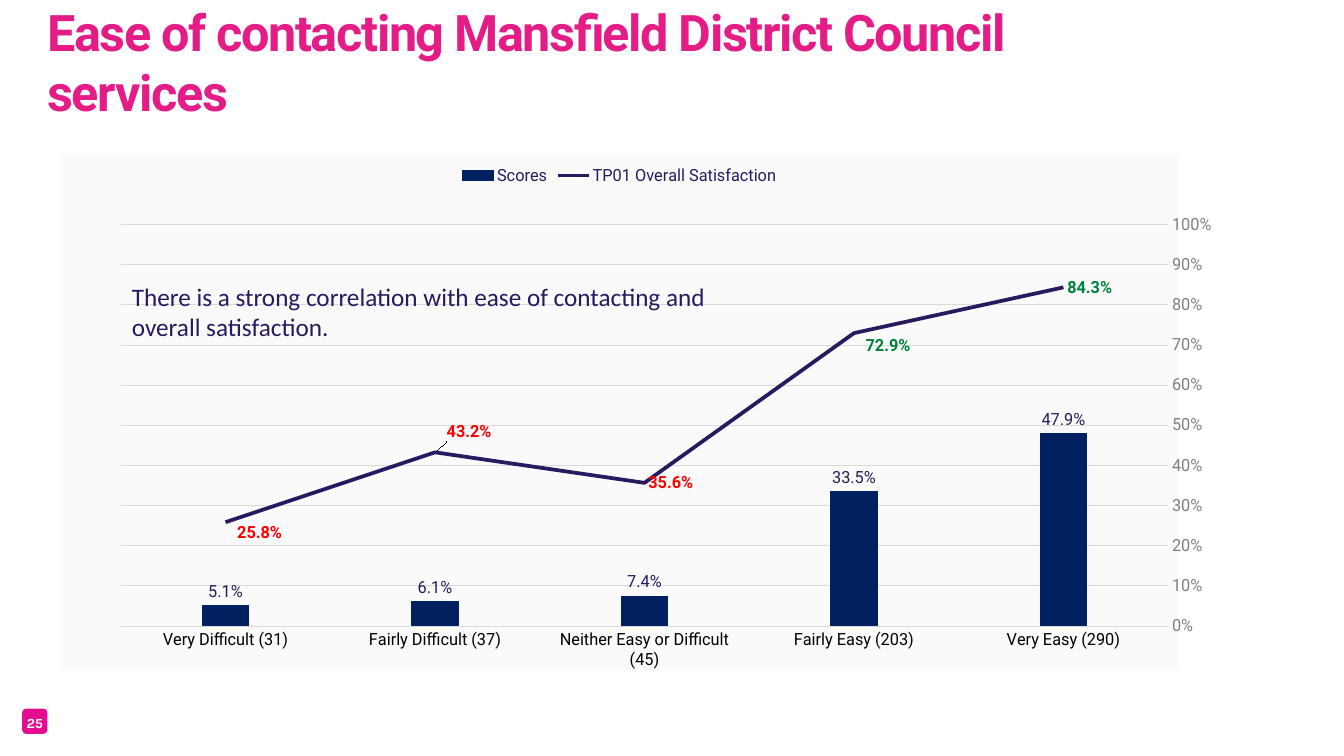
from dataclasses import dataclass

from pptx import Presentation
from pptx.chart.data import CategoryChartData
from pptx.dml.color import RGBColor
from pptx.enum import chart as charts, shapes, text
from pptx.oxml import parse_xml
from pptx.oxml.ns import nsdecls, qn
from pptx.util import Pt


@dataclass(frozen=True)
class Theme:
    pink: str = "E41C86"
    badge: str = "E30D8F"
    white: str = "FFFFFF"
    indigo: str = "291A5F"
    navy: str = "002060"
    black: str = "000000"
    grey: str = "808080"
    grid: str = "D9D9D9"
    panel: str = "FAFAFA"
    low: str = "FF0000"
    high: str = "00823B"
    heading: int = 36
    body: int = 18
    label: int = 12
    small: int = 10
    face: str = "Roboto"


THEME = Theme()
ANSWERS = [  # answer, share, satisfaction, label colour, label shift (x, y)
    ("Very Easy (290)", 0.479, 0.843, THEME.high, None),
    ("Fairly Easy (203)", 0.335, 0.729, THEME.high, (0.007, 0.025)),
    ("Neither Easy or Difficult (45)", 0.074, 0.356, THEME.low, None),
    ("Fairly Difficult (37)", 0.061, 0.432, THEME.low, (0.007, -0.04)),
    ("Very Difficult (31)", 0.051, 0.258, THEME.low, (0.007, 0.02)),
]


def apply(target, values):
    for name, value in values.items():
        setattr(target, name, value)


def style_font(font, size, color, face=THEME.face, bold=False):
    apply(font, {"size": Pt(size), "name": face, "bold": bold})
    font.color.rgb = RGBColor.from_string(color)


def style_line(line, color, width):
    line.color.rgb = RGBColor.from_string(color)
    line.width = Pt(width)


def fill_solid(fill, color):
    fill.solid()
    fill.fore_color.rgb = RGBColor.from_string(color)


def add_text(page, place, words, font, frame_format=None, para_format=None, spacing=None):
    """Add a wrapped text box; spacing is letter spacing in hundredths of a point."""
    frame = page.shapes.add_textbox(*map(Pt, place)).text_frame
    apply(frame, {"word_wrap": True, "auto_size": text.MSO_AUTO_SIZE.SHAPE_TO_FIT_TEXT})
    apply(frame, frame_format or {})
    para = frame.paragraphs[0]
    apply(para, para_format or {})
    span = para.add_run()
    span.text = words
    style_font(span.font, **font)
    if spacing:
        span.font._element.set("spc", str(spacing))


def add_badge(page, number):
    badge = page.shapes.add_shape(
        shapes.MSO_SHAPE.ROUNDED_RECTANGLE, *map(Pt, (15.84, 506.16, 18, 18)))
    badge.shadow.inherit = False
    badge.line.fill.background()
    fill_solid(badge.fill, THEME.badge)
    add_text(page, (15.84, 510.5, 18, 9.4), number,
             {"size": THEME.small, "color": THEME.white, "face": "Karla", "bold": True},
             NO_MARGINS, {"alignment": text.PP_ALIGN.CENTER, "line_spacing": Pt(12)})


def manual_layout(x, y, extra=""):
    return parse_xml(
        f'<c:layout {nsdecls("c")}><c:manualLayout>{extra}'
        f'<c:x val="{x}"/><c:y val="{y}"/></c:manualLayout></c:layout>')


def place_plot(chart, x, y, width, height):
    area = chart._chartSpace.chart.plotArea
    for old in area.findall(qn("c:layout")):
        area.remove(old)
    layout = manual_layout(
        x, y, '<c:layoutTarget val="inner"/><c:xMode val="edge"/><c:yMode val="edge"/>')
    for tag, value in (("w", width), ("h", height)):
        layout[0].append(parse_xml(f'<c:{tag} {nsdecls("c")} val="{value}"/>'))
    area.insert(0, layout)


def turn_last_series_into_line(chart):
    bars = chart._chartSpace.chart.plotArea.find(qn("c:barChart"))
    series = bars.findall(qn("c:ser"))[-1]
    for flag in series.findall(qn("c:invertIfNegative")):
        series.remove(flag)
    axes = "".join(f'<c:axId val="{axis.get("val")}"/>' for axis in bars.findall(qn("c:axId")))
    lines = parse_xml(
        f'<c:lineChart {nsdecls("c")}><c:grouping val="standard"/><c:varyColors val="0"/>'
        f'<c:marker val="1"/>{axes}</c:lineChart>')
    lines.insert(2, series)
    bars.addnext(lines)


def fill_chart(chart, color):
    chart._chartSpace.chart.addnext(parse_xml(
        f'<c:spPr {nsdecls("c", "a")}><a:solidFill><a:srgbClr val="{color}"/></a:solidFill>'
        '<a:ln><a:noFill/></a:ln></c:spPr>'))


def style_axes(chart):
    for axis, color in ((chart.category_axis, THEME.black), (chart.value_axis, THEME.grey)):
        apply(axis, {"major_tick_mark": charts.XL_TICK_MARK.NONE,
                     "minor_tick_mark": charts.XL_TICK_MARK.NONE})
        axis.format.line.fill.background()
        style_font(axis.tick_labels.font, THEME.label, color)
    chart.category_axis.reverse_order = True
    apply(chart.value_axis, {"minimum_scale": 0, "maximum_scale": 1, "major_unit": 0.1,
                             "has_major_gridlines": True})
    apply(chart.value_axis.tick_labels, {"number_format": "0%", "number_format_is_linked": False})
    style_line(chart.value_axis.major_gridlines.format.line, THEME.grid, 0.25)


def style_labels(labels, position):
    apply(labels, {"show_value": True, "number_format": "0.0%",
                   "number_format_is_linked": False, "position": position})
    style_font(labels.font, THEME.label, THEME.indigo)


def style_bars(plot):
    apply(plot, {"gap_width": 350, "overlap": -27, "vary_by_categories": False})
    scores = plot.series[0]
    fill_solid(scores.format.fill, THEME.navy)
    style_line(scores.format.line, THEME.navy, 0.75)
    style_labels(scores.data_labels, charts.XL_LABEL_POSITION.OUTSIDE_END)


def style_satisfaction(series):
    series.smooth = False
    series.marker.style = charts.XL_MARKER_STYLE.NONE
    style_line(series.format.line, THEME.indigo, 2.75)
    style_labels(series.data_labels, charts.XL_LABEL_POSITION.RIGHT)
    for index, (*_, color, shift) in enumerate(ANSWERS):
        label = series.points[index].data_label
        style_font(label.font, THEME.label, color, bold=True)
        label.position = charts.XL_LABEL_POSITION.RIGHT
        position = label._dLbl.find(qn("c:idx"))
        position.addnext(parse_xml(
            f'<c:numFmt {nsdecls("c")} formatCode="0.0%" sourceLinked="0"/>'))
        if shift:
            position.addnext(manual_layout(*shift))


def add_satisfaction_chart(page):
    names, scores, satisfaction, *_ = zip(*ANSWERS)
    data = CategoryChartData(number_format="0.0%")
    data.categories = names
    data.add_series("Scores", scores)
    data.add_series("TP01 Overall Satisfaction", satisfaction)
    chart = page.shapes.add_chart(
        charts.XL_CHART_TYPE.COLUMN_CLUSTERED, *map(Pt, (43.2, 110.16, 822.24, 368.64)), data).chart
    turn_last_series_into_line(chart)
    apply(chart, {"has_title": False, "has_legend": True})
    style_font(chart.font, THEME.small, THEME.indigo)
    apply(chart.legend, {"position": charts.XL_LEGEND_POSITION.TOP, "include_in_layout": False})
    style_font(chart.legend.font, THEME.label, THEME.indigo)
    fill_chart(chart, THEME.panel)
    place_plot(chart, 0.054, 0.136, 0.937, 0.778)
    style_axes(chart)
    bars, lines = chart.plots
    style_bars(bars)
    style_satisfaction(lines.series[0])


NO_MARGINS = {f"margin_{side}": 0 for side in ("left", "top", "right", "bottom")}


def main():
    deck = Presentation()
    apply(deck, {"slide_width": Pt(960), "slide_height": Pt(540)})
    page = deck.slides.add_slide(deck.slide_layouts[6])
    add_badge(page, "25")
    add_text(page, (33.84, 0, 816.48, 87.12),
             "Ease of contacting Mansfield District Council services",
             {"size": THEME.heading, "color": THEME.pink, "bold": True},
             {**NO_MARGINS, "vertical_anchor": text.MSO_ANCHOR.BOTTOM}, spacing=-100)
    add_satisfaction_chart(page)
    add_text(page, (87.12, 197.28, 445.68, 51.12),
             "There is a strong correlation with ease of contacting and overall satisfaction.",
             {"size": THEME.body, "color": THEME.indigo, "face": "Calibri"})
    deck.save("out.pptx")


if __name__ == "__main__":
    main()
